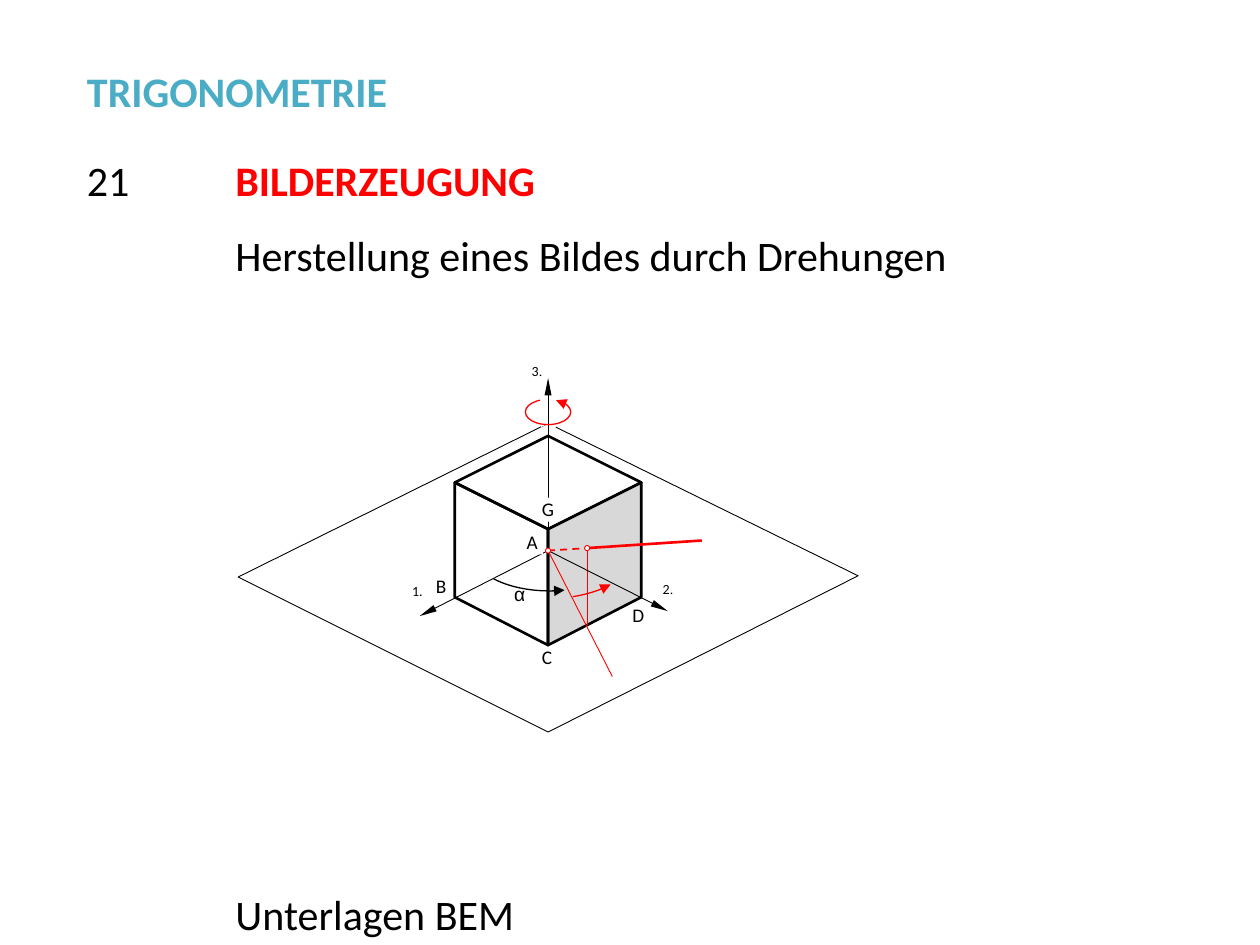
import pptx
import pptx.util
import pptx.dml.color
import pptx.enum.dml
import pptx.enum.shapes
import pptx.enum.text
import pptx.oxml
import pptx.oxml.ns

Inches = pptx.util.Inches
Kind = pptx.enum.shapes.MSO_SHAPE
COLORS = {"ink": "000000", "red": "FF0000", "teal": "4BACC6",
          "gray": "D8D8D8", "white": "FFFFFF"}


def color(name):
    """Return the named colour."""
    return pptx.dml.color.RGBColor.from_string(COLORS[name])


def write(frame, runs, size, tint="ink", bold=False, pad=(0, 0), after=0):
    """Write one paragraph of (text, font) runs into a frame."""
    frame.word_wrap = True
    frame.auto_size = pptx.enum.text.MSO_AUTO_SIZE.NONE
    frame.vertical_anchor = pptx.enum.text.MSO_ANCHOR.TOP
    frame.margin_left = frame.margin_right = Inches(pad[0])
    frame.margin_top = frame.margin_bottom = Inches(pad[1])
    para = frame.paragraphs[0]
    para.alignment = pptx.enum.text.PP_ALIGN.LEFT
    para.space_after = pptx.util.Pt(after)
    for text, face in runs:
        run = para.add_run()
        run.text = text
        run.font.name = face
        run.font.size = pptx.util.Pt(size)
        run.font.bold = bold
        run.font.color.rgb = color(tint)


def stroke(shape, tint, width, end=None, wide="med", long="med"):
    """Style a line, with an optional arrow at headEnd or tailEnd."""
    shape.line.color.rgb = color(tint)
    shape.line.width = pptx.util.Pt(width)
    if end:
        line = shape.line._get_or_add_ln()
        line.append(pptx.oxml.parse_xml(
            f'<a:{end} {pptx.oxml.ns.nsdecls("a")} type="triangle" '
            f'w="{wide}" len="{long}"/>'))


def paint(shape, fill):
    """Fill a shape, or leave it open, without a shadow."""
    shape.shadow.inherit = False
    if fill:
        shape.fill.solid()
        shape.fill.fore_color.rgb = color(fill)
    else:
        shape.fill.background()


class Sketch:
    """Draws in a group, in inches measured from one origin point."""

    def __init__(self, slide, left, top):
        self.shapes = slide.shapes.add_group_shape().shapes
        self.left, self.top = left, top

    def spot(self, x, y):
        """Turn an offset into a place on the slide."""
        return Inches(self.left + x), Inches(self.top + y)

    def outline(self, points, width, fill=None, tint="ink", close=True):
        """Draw straight edges through the points."""
        first, *rest = [self.spot(*point) for point in points]
        build = self.shapes.build_freeform(*first)
        build.add_line_segments(rest, close=close)
        shape = build.convert_to_shape()
        paint(shape, fill)
        stroke(shape, tint, width)

    def line(self, start, stop, tint, width, end=None, dash=False):
        """Draw a straight line, with a slim arrow if an end is named."""
        link = self.shapes.add_connector(
            pptx.enum.shapes.MSO_CONNECTOR.STRAIGHT,
            *self.spot(*start), *self.spot(*stop))
        if dash:
            link.line.dash_style = pptx.enum.dml.MSO_LINE.DASH
        stroke(link, tint, width, end, "sm", "lg")
        link._element.spPr.append(pptx.oxml.parse_xml(
            f'<a:effectLst {pptx.oxml.ns.nsdecls("a")}/>'))

    def oval(self, kind, mid, radii, fill, tint, width, end=None):
        """Place an ellipse or arc around its centre."""
        rx, ry = radii
        shape = self.shapes.add_shape(
            kind, *self.spot(mid[0] - rx, mid[1] - ry),
            Inches(2 * rx), Inches(2 * ry))
        paint(shape, fill)
        stroke(shape, tint, width, end)
        return shape

    def arc(self, mid, radii, start, stop, tint):
        """Draw an arc clockwise, in degrees, with its arrow at the start."""
        shape = self.oval(Kind.ARC, mid, radii, None, tint, 0.75, "headEnd")
        shape.adjustments[0] = start * 0.6
        shape.adjustments[1] = stop * 0.6

    def label(self, x, y, runs, size, wide=0.18, high=0.27, fill=None):
        """Place a small label."""
        box = self.shapes.add_textbox(
            *self.spot(x, y), Inches(wide), Inches(high))
        if fill:
            box.fill.solid()
            box.fill.fore_color.rgb = color(fill)
        write(box.text_frame, runs, size, after=10)


def cube(art):
    """Draw the ground plane and the cube."""
    art.outline([(0, -1.01), (2.46, 0.2), (0, 1.44), (-2.46, 0.21)], 0.5)
    art.outline([(-0.06, -0.99), (0, -1.02), (0.06, -0.98)], 1.5,
                tint="white", close=False)
    back, front, base = (0, -0.91), (0, -0.17), (0, 0.75)
    west, east = (-0.74, -0.54), (0.74, -0.54)
    art.outline([back, east, front, west], 1.5)
    art.outline([(0.74, 0.37), base, front, east], 1.5, "gray")
    art.outline([(-0.74, 0.37), base, front, west], 1.5)


def rays(art):
    """Draw the axes, sight lines and turning arrows."""
    eye, hit = (0, 0), (0.31, -0.02)
    art.line(hit, (0.31, 0.59), "red", 0.5)
    for tip in [(0, -1.37), (0.95, 0.48), (-1.02, 0.52)]:
        art.line(eye, tip, "ink", 0.5, "tailEnd")
    art.line(eye, hit, "red", 1, dash=True)
    art.line(eye, (0.51, 1), "red", 0.5)
    art.line(hit, (1.22, -0.08), "red", 1.5)
    art.arc((0.01, 0), (0.62, 0.32), 69, 153, "ink")
    art.arc((0.01, 0), (0.69, 0.38), 29, 63, "red")
    art.arc((0, -1.1), (0.18, 0.1), 304, 236, "red")
    for mid in (eye, hit):
        art.oval(Kind.OVAL, mid, (0.02, 0.02), "white", "red", 0.5)


def names(art):
    """Label the axes, corners and angle."""
    art.label(-1.08, 0.25, [("1.", "Calibri")], 8)
    for x, y, digit in [(0.91, 0.24, "2"), (-0.13, -1.49, "3")]:
        art.label(x, y, [(digit, "Calibri"), (".", "Times New Roman")], 8)
    art.label(-0.05, 0.75, [("C", "Calibri")], 11)
    for x, y, text, face, fill in [
            (-0.89, 0.19, "B", "Calibri", None),
            (-0.05, -0.42, "G", "Calibri", "white"),
            (0.67, 0.42, "D", "Calibri", None),
            (-0.17, -0.16, "A", "Calibri", "white"),
            (-0.27, 0.25, "α", "Arial", None)]:
        art.label(x, y, [(text, face)], 11, 0.13, 0.19, fill)


def figure(slide, left, top):
    """Draw the figure with the given top left corner."""
    art = Sketch(slide, left + 2.46, top + 1.49)
    cube(art)
    rays(art)
    names(art)


def texts(slide, left, top):
    """Set the title and the text lines."""
    head = slide.shapes.title
    head.left, head.top = Inches(left), Inches(top)
    head.width, head.height = Inches(4.41), Inches(0.5)
    pad = (0.1, 0.05)
    write(head.text_frame, [("TRIGONOMETRIE", "Calibri")], 24, "teal", True, pad)
    for x, y, wide, text, tint, bold in [
            (0, 0.71, 1.02, "21", "ink", False),
            (1.18, 0.71, 6.9, "BILDERZEUGUNG", "red", True),
            (1.18, 1.3, 6.9, "Herstellung eines Bildes durch Drehungen",
             "ink", False),
            (1.18, 6.53, 6.48, "Unterlagen BEM", "ink", False)]:
        box = slide.shapes.add_textbox(
            Inches(left + x), Inches(top + y), Inches(wide), Inches(0.5))
        write(box.text_frame, [(text, "Calibri")], 24, tint, bold, pad)


def main():
    """Build the slide."""
    deck = pptx.Presentation()
    deck.slide_width, deck.slide_height = Inches(10), Inches(7.5)
    slide = deck.slides.add_slide(deck.slide_layouts[5])
    figure(slide, 1.89, 2.88)
    texts(slide, 0.59, 0.47)
    deck.save("out.pptx")


if __name__ == "__main__":
    main()
